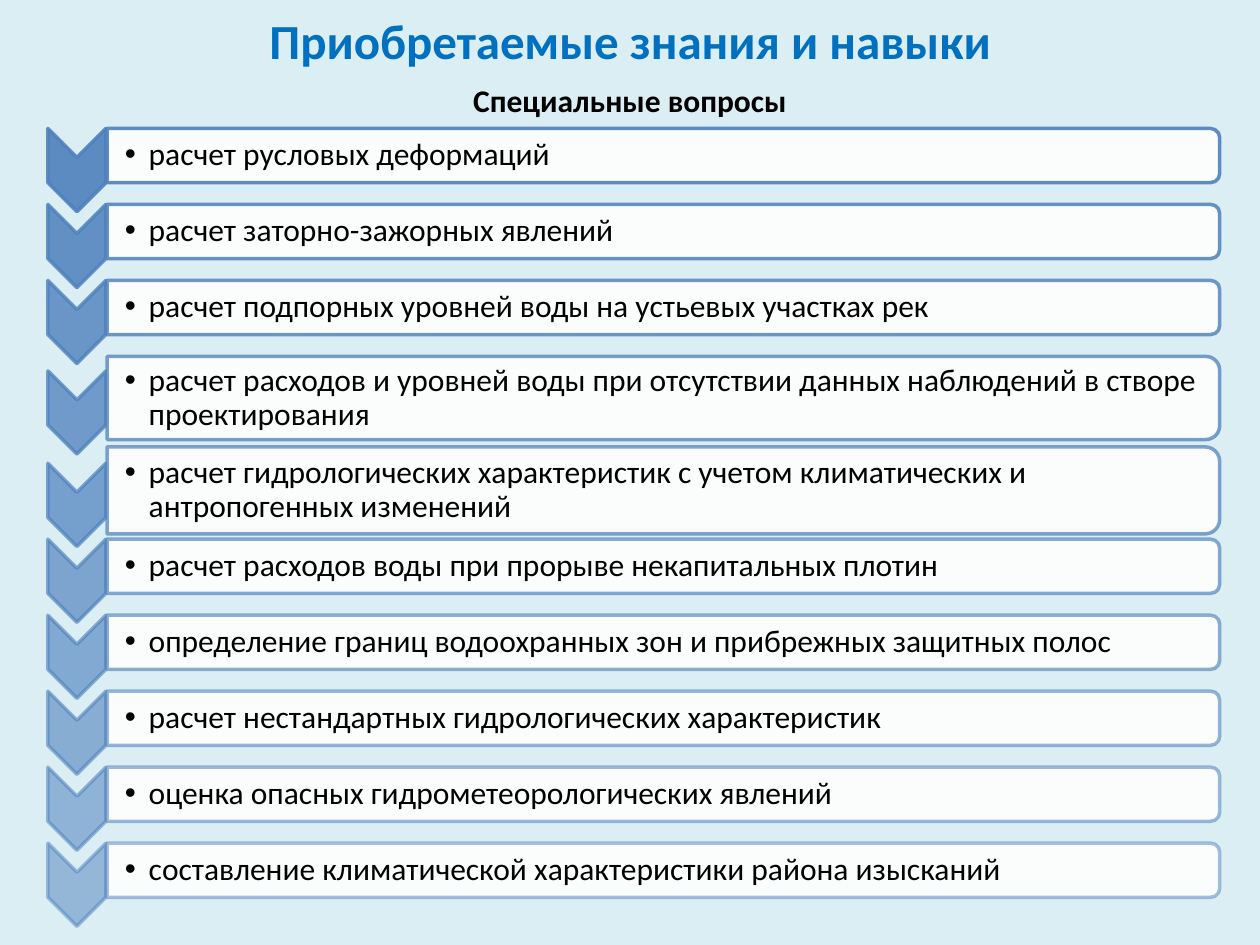
from dataclasses import dataclass

from lxml import etree
from pptx import Presentation
from pptx.dml.color import RGBColor
from pptx.enum.shapes import MSO_SHAPE
from pptx.enum.text import MSO_ANCHOR, PP_ALIGN
from pptx.oxml.ns import qn
from pptx.util import Inches, Pt

CHEVRON = MSO_SHAPE.CHEVRON
ROUND_BAR = MSO_SHAPE.ROUND_2_SAME_RECTANGLE
MIDDLE, TOP = MSO_ANCHOR.MIDDLE, MSO_ANCHOR.TOP
LEFT, CENTER = PP_ALIGN.LEFT, PP_ALIGN.CENTER


@dataclass(frozen=True)
class Theme:
    font: str = "Calibri"
    background: str = "DBEEF4"
    title: str = "0070C0"
    text: str = "000000"
    accent: str = "4F81BD"
    bar: str = "FFFFFF"
    title_size: int = 28
    body_size: int = 18
    line_width: int = 2


THEME = Theme()

BAR_HEIGHT = 0.43
ROW_PITCH = 0.6
FIRST_CENTER = 1.235
BAR_LEFT, BAR_WIDTH = 0.85, 8.83
CHEVRON_LENGTH, CHEVRON_WIDTH = 0.66, 0.46
CHEVRON_CENTER_X, CHEVRON_DROP = 0.61, 0.115
FIRST_ALPHA, LAST_ALPHA = 90, 50

TOPICS = [
    ("расчет русловых деформаций", BAR_HEIGHT),
    ("расчет заторно-зажорных явлений", BAR_HEIGHT),
    ("расчет подпорных уровней воды на устьевых участках рек", BAR_HEIGHT),
    ("расчет расходов и уровней воды при отсутствии данных наблюдений "
     "в створе проектирования", 0.66),
    ("расчет гидрологических характеристик с учетом климатических "
     "и антропогенных изменений", 0.69),
    ("расчет расходов воды при прорыве некапитальных плотин", BAR_HEIGHT),
    ("определение границ водоохранных зон и прибрежных защитных полос", BAR_HEIGHT),
    ("расчет нестандартных гидрологических характеристик", BAR_HEIGHT),
    ("оценка опасных гидрометеорологических явлений", BAR_HEIGHT),
    ("составление климатической характеристики района изысканий", BAR_HEIGHT),
]


def set_color(fill, color, alpha=100):
    """Make the fill solid, with alpha as percent of opacity."""
    fill.solid()
    fill.fore_color.rgb = RGBColor.from_string(color)
    if alpha < 100:
        clr = fill._xPr.find(qn("a:solidFill"))[0]
        etree.SubElement(clr, qn("a:alpha"), val=str(round(alpha * 1000)))


def add_turned_shape(s, kind, center, size, fill, fill_alpha, line_alpha):
    """Add a shape turned by 90 degrees; size is its length and width before the turn."""
    (cx, cy), (w, h) = center, size
    sp = s.shapes.add_shape(kind, Inches(cx - w / 2), Inches(cy - h / 2),
                            Inches(w), Inches(h))
    sp.rotation = 90
    sp.shadow.inherit = False
    set_color(sp.fill, fill, fill_alpha)
    set_color(sp.line.fill, THEME.accent, line_alpha)
    sp.line.width = Pt(THEME.line_width)


def add_text(s, box, text, size=THEME.body_size, color=THEME.text, bold=False,
             align=CENTER, anchor=MIDDLE, margins=(0.1, 0.05, 0.1, 0.05)):
    tf = s.shapes.add_textbox(*map(Inches, box)).text_frame
    left, top, right, bottom = map(Inches, margins)
    frame_format = {"word_wrap": True, "vertical_anchor": anchor,
                    "margin_left": left, "margin_top": top,
                    "margin_right": right, "margin_bottom": bottom}
    for name, value in frame_format.items():
        setattr(tf, name, value)
    p = tf.paragraphs[0]
    p.alignment = align
    r = p.add_run()
    r.text = text
    for name, value in {"name": THEME.font, "size": Pt(size), "bold": bold}.items():
        setattr(r.font, name, value)
    r.font.color.rgb = RGBColor.from_string(color)
    return p


def add_bullet(p, indent):
    pPr = p._p.get_or_add_pPr()
    pPr.set("marL", str(Inches(indent)))
    pPr.set("indent", str(-Inches(indent)))
    etree.SubElement(pPr, qn("a:buFont"), typeface="Arial")
    etree.SubElement(pPr, qn("a:buChar"), char="•")


def add_topic(s, text, center_y, height, alpha):
    add_turned_shape(s, CHEVRON, (CHEVRON_CENTER_X, center_y + CHEVRON_DROP),
                     (CHEVRON_LENGTH, CHEVRON_WIDTH), THEME.accent, alpha, alpha)
    add_turned_shape(s, ROUND_BAR, (BAR_LEFT + BAR_WIDTH / 2, center_y),
                     (height, BAR_WIDTH), THEME.bar, 90, alpha)
    text_height = height * 0.91
    p = add_text(s, (BAR_LEFT, center_y - text_height / 2, BAR_WIDTH - 0.02, text_height),
                 text, align=LEFT, margins=(0.14, 0.01, 0.01, 0.01))
    p.line_spacing = 0.9
    add_bullet(p, 0.19)


def add_topics(s):
    """Stack the topics; a taller bar pushes its centre down by half its extra height."""
    center_y = FIRST_CENTER
    alpha_step = (LAST_ALPHA - FIRST_ALPHA) / (len(TOPICS) - 1)
    for i, (text, height) in enumerate(TOPICS):
        center_y += (height - BAR_HEIGHT) / 2
        add_topic(s, text, center_y, height, FIRST_ALPHA + i * alpha_step)
        center_y += ROW_PITCH + 0.003


def main():
    prs = Presentation()
    prs.slide_width, prs.slide_height = Inches(10), Inches(7.5)
    s = prs.slides.add_slide(prs.slide_layouts[6])
    set_color(s.background.fill, THEME.background)
    add_text(s, (0, 0.04, 10, 0.55), "Приобретаемые знания и навыки",
             size=THEME.title_size, color=THEME.title, bold=True)
    add_topics(s)
    add_text(s, (0, 0.59, 10, 0.4), "Специальные вопросы", bold=True, anchor=TOP)
    prs.save("out.pptx")


if __name__ == "__main__":
    main()
